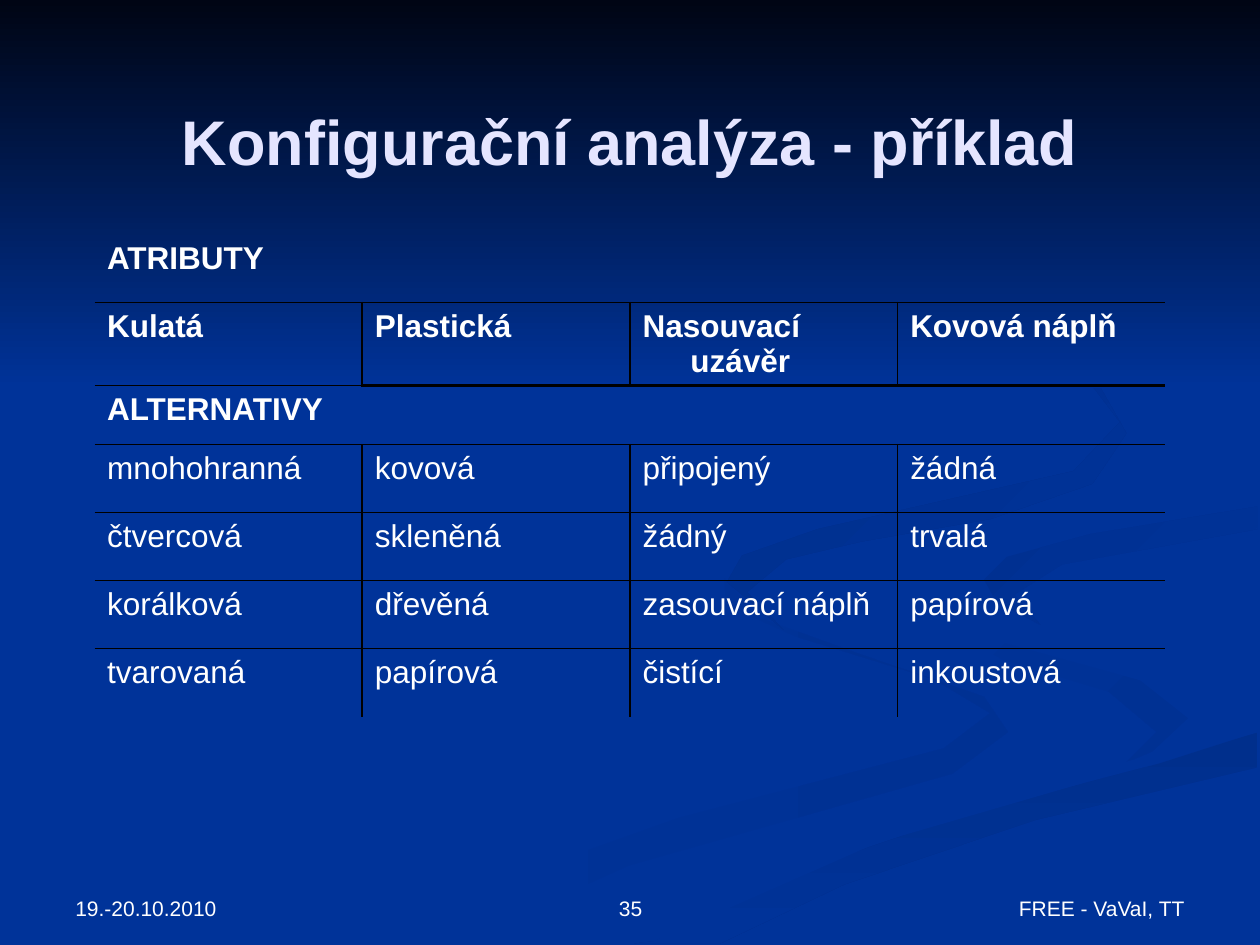
from lxml.etree import SubElement
from pptx import Presentation
from pptx.dml.color import RGBColor
from pptx.enum.shapes import MSO_SHAPE
from pptx.enum.text import MSO_ANCHOR, PP_ALIGN
from pptx.oxml.ns import qn
from pptx.util import Inches, Pt

FONT = "Arial"
BLUE = RGBColor(0x00, 0x33, 0x99)
NIGHT = RGBColor(0x00, 0x05, 0x14)
SHADE = RGBColor(0x00, 0x2F, 0x8C)
SOFT_SHADE = RGBColor(0x00, 0x30, 0x91)
FAINT_SHADE = RGBColor(0x00, 0x31, 0x93)
WHITE = RGBColor(0xFF, 0xFF, 0xFF)
LAVENDER = RGBColor(0xE5, 0xE5, 0xFF)
BLACK = RGBColor(0x00, 0x00, 0x00)

TITLE = "Konfigurační analýza - příklad"
ROWS = [
    ["ATRIBUTY"],
    ["Kulatá", "Plastická", "Nasouvací uzávěr", "Kovová náplň"],
    ["ALTERNATIVY"],
    ["mnohohranná", "kovová", "připojený", "žádná"],
    ["čtvercová", "skleněná", "žádný", "trvalá"],
    ["korálková", "dřevěná", "zasouvací náplň", "papírová"],
    ["tvarovaná", "papírová", "čistící", "inkoustová"],
]
ROW_HEIGHT = 0.54
SHORT_ROWS = {1: 0.49, 2: 0.47}
COLUMNS = 4
BOLD_ROWS = 3
HEADER_ROW = 1

# text, left, width, alignment
FOOTERS = [
    ("19.-20.10.2010", 0.5, 2.33, PP_ALIGN.LEFT),
    ("35", 3.42, 3.17, PP_ALIGN.CENTER),
    ("FREE - VaVaI, TT", 7.17, 2.33, PP_ALIGN.RIGHT),
]

# start colour, end colour, clockwise angle, outline in inches
RIBBONS = [
    (BLUE, FAINT_SHADE, 0, [
        (7.81, 5.53), (6.82, 5.19), (6.02, 4.9), (5.75, 4.59), (5.76, 4.8),
        (6.31, 5.05), (7.41, 5.39), (7.86, 5.66), (7.49, 5.94), (5.39, 6.49),
        (3.76, 7.07), (3, 7.49), (3.61, 7.49), (4.99, 6.87), (7.56, 6.14),
        (8, 5.81)]),
    (BLUE, FAINT_SHADE, 45, [
        (9.43, 5.7), (9.05, 5.4), (7.92, 5.09), (7.45, 4.9), (7.24, 4.64),
        (7.39, 4.94), (7.97, 5.24), (8.8, 5.49), (9.18, 5.81), (8.94, 6.05),
        (9.32, 5.89)]),
    (SHADE, BLUE, 90, [
        (5.03, 7.49), (5.71, 7.49), (6.7, 7.02), (8.21, 6.51), (9.98, 6.09),
        (9.98, 5.81), (9.2, 6.06), (7.64, 6.47), (6.3, 6.93), (5.19, 7.47)]),
    (BLUE, BLUE, 0, [
        (7.25, 4.64), (7.59, 4.98), (9.05, 5.4), (9.43, 5.7), (9.11, 6),
        (7.04, 6.55), (4.77, 7.49), (5.19, 7.47), (6.96, 6.69), (9.99, 5.81),
        (9.99, 5.38), (8.32, 4.98), (7.81, 4.63), (8.35, 4.3), (9.99, 4.02),
        (9.99, 3.87), (8.08, 4.17), (7.42, 4.39)]),
    (SOFT_SHADE, BLUE, 45, [
        (7.81, 4.6), (7.91, 4.78), (8.26, 4.96), (8.05, 4.72), (8.43, 4.48),
        (9.98, 4.2), (9.98, 4.02), (8.65, 4.24), (7.99, 4.42)]),
    (SHADE, BLUE, 45, [
        (6.83, 4.3), (7.86, 4.12), (8.67, 3.84), (8.94, 3.44), (8.64, 2.91),
        (7.62, 2.33), (8.46, 2.79), (8.89, 3.35), (8.52, 3.74), (6.49, 4.2),
        (5.89, 4.41), (5.77, 4.62), (6.22, 5), (5.93, 4.7), (6.24, 4.44)]),
]


def paint(sp, start, end, angle):
    """Fill a backdrop shape and remove its outline and shadow."""
    sp.shadow.inherit = False
    sp.line.fill.background()
    if start == end:
        sp.fill.solid()
        sp.fill.fore_color.rgb = start
        return
    sp.fill.gradient()
    sp.fill.gradient_angle = (360 - angle) % 360
    for stop, color in zip(sp.fill.gradient_stops, (start, end)):
        stop.color.rgb = color


def add_backdrop(s):
    for start, end, angle, outline in RIBBONS:
        points = [(Inches(x), Inches(y)) for x, y in outline]
        builder = s.shapes.build_freeform(*points[0])
        builder.add_line_segments(points[1:], close=True)
        paint(builder.convert_to_shape(), start, end, angle)
    sky = s.shapes.add_shape(MSO_SHAPE.RECTANGLE, 0, 0, Inches(10), Inches(3.08))
    paint(sky, NIGHT, BLUE, 90)


def add_run(p, text, size, color, bold=False):
    r = p.add_run()
    r.text = text
    r.font.name = FONT
    r.font.size = Pt(size)
    r.font.bold = bold
    r.font.color.rgb = color


def set_border(cell, side, width):
    """Draw one cell edge; a width of 0 hides it."""
    ln = SubElement(cell._tc.get_or_add_tcPr(), qn(f"a:ln{side}"), w=str(Pt(width)))
    if width:
        fill = SubElement(ln, qn("a:solidFill"))
        SubElement(fill, qn("a:srgbClr"), val=str(BLACK))
    else:
        SubElement(ln, qn("a:noFill"))


def rule_width(above, column):
    """Width of the horizontal rule below row `above`."""
    if above < 0 or above == len(ROWS) - 1:
        return 0
    return 2 if above == HEADER_ROW and column > 0 else 1


def add_attribute_table(s):
    heights = [SHORT_ROWS.get(i, ROW_HEIGHT) for i in range(len(ROWS))]
    table = s.shapes.add_table(len(ROWS), COLUMNS, Inches(0.75), Inches(1.86),
                               Inches(8.5), Inches(sum(heights))).table
    table.first_row = table.horz_banding = False
    for row, height in zip(table.rows, heights):
        row.height = Inches(height)
    for i, texts in enumerate(ROWS):
        split = len(texts) == COLUMNS
        for j in range(COLUMNS):
            cell = table.cell(i, j)
            set_border(cell, "L", int(split and j > 0))
            set_border(cell, "R", int(split and j < COLUMNS - 1))
            set_border(cell, "T", rule_width(i - 1, j))
            set_border(cell, "B", rule_width(i, j))
            cell.fill.background()
        if not split:
            table.cell(i, 1).merge(table.cell(i, COLUMNS - 1))
        for j, text in enumerate(texts):
            p = table.cell(i, j).text_frame.paragraphs[0]
            pPr = p._p.get_or_add_pPr()
            pPr.set("marL", str(Inches(0.38)))
            pPr.set("indent", str(-Inches(0.38)))
            add_run(p, text, 18, WHITE, bold=i < BOLD_ROWS)


def add_footer(s, text, left, width, align):
    tf = s.shapes.add_textbox(Inches(left), Inches(6.84),
                              Inches(width), Inches(0.52)).text_frame
    tf.word_wrap = True
    tf.vertical_anchor = MSO_ANCHOR.BOTTOM
    p = tf.paragraphs[0]
    p.alignment = align
    add_run(p, text, 12, WHITE)


def format_title(s):
    title = s.shapes.title
    title.left, title.top = Inches(0.75), Inches(0.67)
    title.width, title.height = Inches(8.5), Inches(0.88)
    title.text_frame.vertical_anchor = MSO_ANCHOR.MIDDLE
    p = title.text_frame.paragraphs[0]
    p.alignment = PP_ALIGN.CENTER
    add_run(p, TITLE, 36, LAVENDER, bold=True)
    s.shapes.element.append(title.element)  # bring in front of the backdrop


def main():
    prs = Presentation()
    prs.slide_width, prs.slide_height = Inches(10), Inches(7.5)
    s = prs.slides.add_slide(prs.slide_layouts[5])
    s.background.fill.solid()
    s.background.fill.fore_color.rgb = BLUE
    add_backdrop(s)
    add_attribute_table(s)
    format_title(s)
    for footer in FOOTERS:
        add_footer(s, *footer)
    prs.save("out.pptx")


if __name__ == "__main__":
    main()
